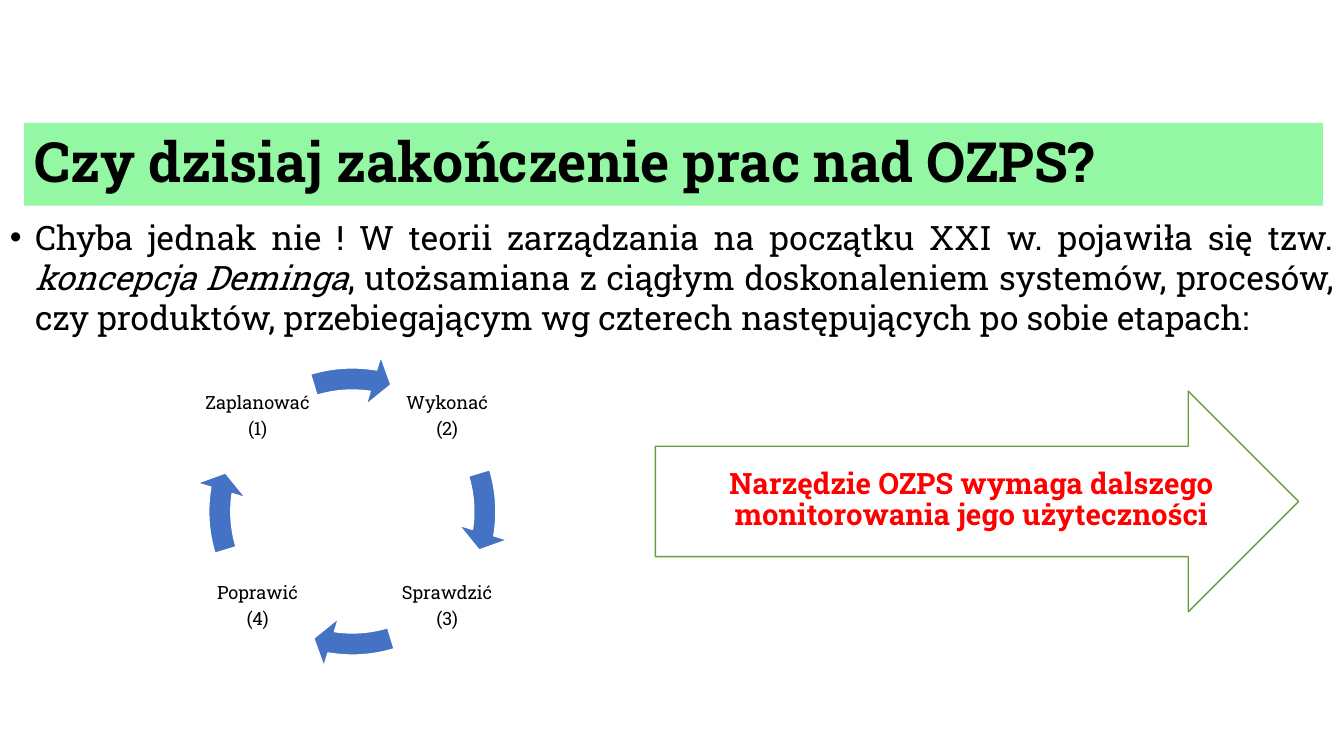
from lxml import etree
from pptx import Presentation
from pptx.dml.color import RGBColor
from pptx.enum.shapes import MSO_SHAPE
from pptx.enum.text import MSO_ANCHOR, MSO_AUTO_SIZE, PP_ALIGN
from pptx.oxml.ns import qn
from pptx.util import Inches, Pt

CIRCULAR_ARROW = MSO_SHAPE.CIRCULAR_ARROW
RIGHT_ARROW = MSO_SHAPE.RIGHT_ARROW
MIDDLE, TOP = MSO_ANCHOR.MIDDLE, MSO_ANCHOR.TOP
LEFT, CENTER, JUSTIFY = PP_ALIGN.LEFT, PP_ALIGN.CENTER, PP_ALIGN.JUSTIFY
NO_AUTOFIT = MSO_AUTO_SIZE.NONE

BLACK = RGBColor(0x00, 0x00, 0x00)
WHITE = RGBColor(0xFF, 0xFF, 0xFF)
RED = RGBColor(0xFF, 0x00, 0x00)
MINT = RGBColor(0x93, 0xF7, 0xA4)
BLUE = RGBColor(0x44, 0x72, 0xC4)
GREEN = RGBColor(0x66, 0x9D, 0x40)


def add_run(p, text, font="Roboto Slab", size=24, color=BLACK, bold=False, italic=False):
    r = p.add_run()
    r.text = text
    r.font.name = font
    r.font.size = Pt(size)
    r.font.color.rgb = color
    r.font.bold = bold
    r.font.italic = italic


class SlideBuilder:
    def __init__(self, prs):
        self.s = prs.slides.add_slide(prs.slide_layouts[5])

    def frame(self, sp, anchor, insets=(0.1, 0.05)):
        tf = sp.text_frame
        tf.word_wrap = True
        tf.auto_size = NO_AUTOFIT
        tf.vertical_anchor = anchor
        tf.margin_left = tf.margin_right = Inches(insets[0])
        tf.margin_top = tf.margin_bottom = Inches(insets[1])
        return tf

    def title(self, text, box):
        sp = self.s.shapes.title
        sp.left, sp.top, sp.width, sp.height = map(Inches, box)
        sp.fill.solid()
        sp.fill.fore_color.rgb = MINT
        p = self.frame(sp, MIDDLE).paragraphs[0]
        p.alignment = LEFT
        p.line_spacing = 0.9
        add_run(p, text, size=39.6, bold=True)

    def bullet(self, runs, box):
        sp = self.s.shapes.add_textbox(*map(Inches, box))
        p = self.frame(sp, TOP).paragraphs[0]
        p.alignment = JUSTIFY
        p.space_after = Pt(6)
        pPr = p._p.get_or_add_pPr()
        pPr.set("marL", str(Inches(0.25)))
        pPr.set("indent", str(Inches(-0.25)))
        etree.SubElement(pPr, qn("a:buFont")).set("typeface", "Arial")
        etree.SubElement(pPr, qn("a:buChar")).set("char", "•")
        for text, italic in runs:
            add_run(p, text, italic=italic)

    def label(self, lines, box, insets=(0.02, 0.02), **style):
        sp = self.s.shapes.add_textbox(*map(Inches, box))
        tf = self.frame(sp, MIDDLE, insets)
        for i, line in enumerate(lines):
            p = tf.add_paragraph() if i else tf.paragraphs[0]
            p.alignment = CENTER
            p.line_spacing = 0.9
            p.space_after = Pt(style["size"] * 0.35)
            add_run(p, line, **style)

    def shape(self, kind, box, fill, line, adjustments=()):
        sp = self.s.shapes.add_shape(kind, *map(Inches, box))
        sp.shadow.inherit = False
        sp.fill.solid()
        sp.fill.fore_color.rgb = fill
        sp.line.color.rgb = line
        sp.line.width = Pt(1)
        for i, value in enumerate(adjustments):
            sp.adjustments[i] = value


def main():
    prs = Presentation()
    prs.slide_width, prs.slide_height = Inches(13.33), Inches(7.5)
    slide = SlideBuilder(prs)
    slide.title("Czy dzisiaj zakończenie prac nad OZPS?", (0.24, 1.22, 12.88, 0.82))
    slide.bullet([
        ("Chyba jednak nie ! W teorii zarządzania na początku XXI w. pojawiła się tzw. ", False),
        ("koncepcja Deminga", True),
        (", utożsamiana z ciągłym doskonaleniem systemów, procesów, czy produktów, "
         "przebiegającym wg czterech następujących po sobie etapach:", False),
    ], (0, 2.1, 13.33, 4.63))

    left, right, upper, lower = 2, 3.88, 3.58, 5.46
    stages = [
        ("Wykonać", "(2)", right, upper),
        ("Sprawdzić", "(3)", right, lower),
        ("Poprawić", "(4)", left, lower),
        ("Zaplanować", "(1)", left, upper),
    ]
    quarter, full_turn = 54, 216
    for i, (name, number, x, y) in enumerate(stages):
        slide.label([name, number], (x, y, 1.11, 1.11), size=13)
        end = 5.5 + i * quarter
        start = (205.85 + i * quarter) % full_turn
        slide.shape(CIRCULAR_ARROW, (1.93, 3.51, 3.13, 3.13), BLUE, WHITE,
                    (0.07, 4.65, end, start, 0.08))

    slide.shape(RIGHT_ARROW, (6.5, 3.88, 6.38, 2.19), WHITE, GREEN)
    slide.label(["Narzędzie OZPS wymaga dalszego monitorowania jego użyteczności"],
                (7.02, 4.42, 5.23, 1.09), (0, 0.23), size=21, color=RED, bold=True)
    prs.save("out.pptx")


if __name__ == "__main__":
    main()
